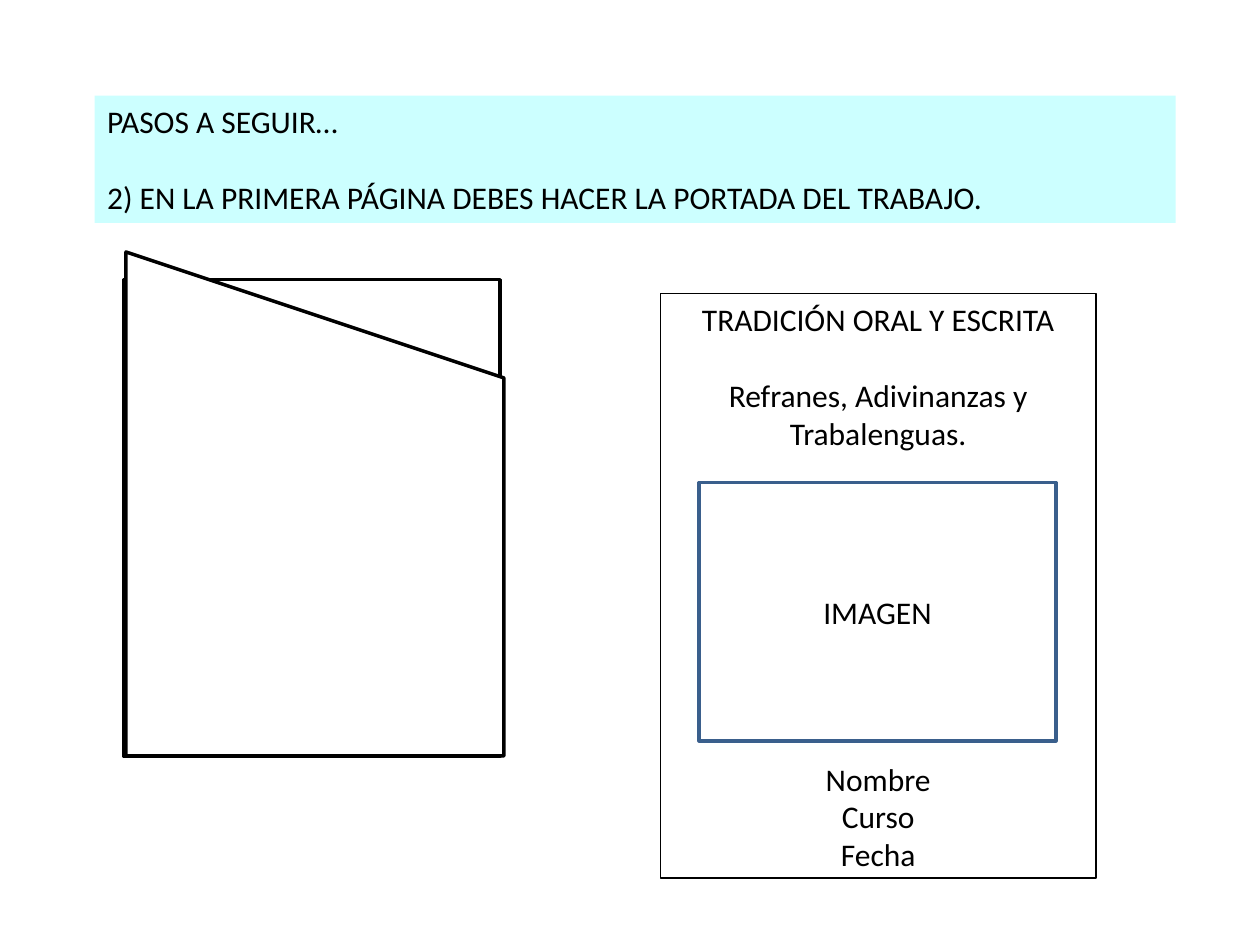
import pptx
import pptx.util
import pptx.dml.color
import pptx.enum.shapes
import pptx.enum.text

COLORS = {
    "paper": "FFFFFF",
    "ink": "000000",
    "banner": "CCFFFF",
    "frame": "3A5F8C",
}
FONT_NAME = "Calibri"
TEXT_LINE = 22  # height of one 18 pt line, in points

presentation = pptx.Presentation()
presentation.slide_width = pptx.util.Inches(10)
presentation.slide_height = pptx.util.Inches(7.5)
slide = presentation.slides.add_slide(presentation.slide_layouts[5])  # title only
RECTANGLE = pptx.enum.shapes.MSO_SHAPE.RECTANGLE
ALIGN = pptx.enum.text.PP_ALIGN
ANCHOR = pptx.enum.text.MSO_ANCHOR


def style_shape(shape, fill, line=None, width=2):
    """Give a shape a plain fill and an optional outline."""
    shape.fill.solid()
    shape.fill.fore_color.rgb = pptx.dml.color.RGBColor.from_string(COLORS[fill])
    if line:
        shape.shadow.inherit = False
        shape.line.color.rgb = pptx.dml.color.RGBColor.from_string(COLORS[line])
        shape.line.width = pptx.util.Pt(width)


def write_text(shape, text, size=18, align=ALIGN.CENTER, anchor=ANCHOR.TOP, gaps=None):
    """Write one paragraph per line; gaps maps a paragraph to the lines left above it."""
    frame = shape.text_frame
    frame.text = text
    frame.word_wrap = True
    frame.auto_size = pptx.enum.text.MSO_AUTO_SIZE.NONE
    frame.vertical_anchor = anchor
    for index, paragraph in enumerate(frame.paragraphs):
        paragraph.alignment = align
        paragraph.space_before = pptx.util.Pt(TEXT_LINE * (gaps or {}).get(index, 0))
        paragraph.font.size = pptx.util.Pt(size)
        paragraph.font.name = FONT_NAME
        paragraph.font.color.rgb = pptx.dml.color.RGBColor.from_string(COLORS["ink"])


# Banner with the step
banner = slide.shapes.title
banner.left, banner.top, banner.width, banner.height = map(
    pptx.util.Inches, (0.75, 0.76, 8.58, 1.01))
style_shape(banner, "banner")
write_text(banner, "PASOS A SEGUIR…\n2) EN LA PRIMERA PÁGINA DEBES HACER LA PORTADA DEL TRABAJO.",
           align=ALIGN.LEFT, gaps={1: 1})

# Folded booklet: back page, then the open front cover
back_page = slide.shapes.add_shape(
    RECTANGLE, *map(pptx.util.Inches, (0.98, 2.22, 2.99, 3.78)))
style_shape(back_page, "paper", "ink")

cover_builder = slide.shapes.build_freeform(1.01, 6, scale=pptx.util.Inches(1))
cover_builder.add_line_segments([(3.82, 6.43), (3.82, 2.72), (1.01, 2.22)], close=True)
front_cover = cover_builder.convert_to_shape()
style_shape(front_cover, "paper", "ink")

# Sample title page with room for the picture between subtitle and details
title_page = slide.shapes.add_shape(
    RECTANGLE, *map(pptx.util.Inches, (5.24, 2.33, 3.46, 4.64)))
style_shape(title_page, "paper", "ink", width=0.75)
write_text(title_page,
           "TRADICIÓN ORAL Y ESCRITA\nRefranes, Adivinanzas y Trabalenguas.\nNombre\nCurso\nFecha",
           gaps={1: 1, 2: 8})

image_frame = slide.shapes.add_shape(
    RECTANGLE, *map(pptx.util.Inches, (5.55, 3.83, 2.83, 2.05)))
style_shape(image_frame, "paper", "frame")
write_text(image_frame, "IMAGEN", anchor=ANCHOR.MIDDLE)

presentation.save("out.pptx")
